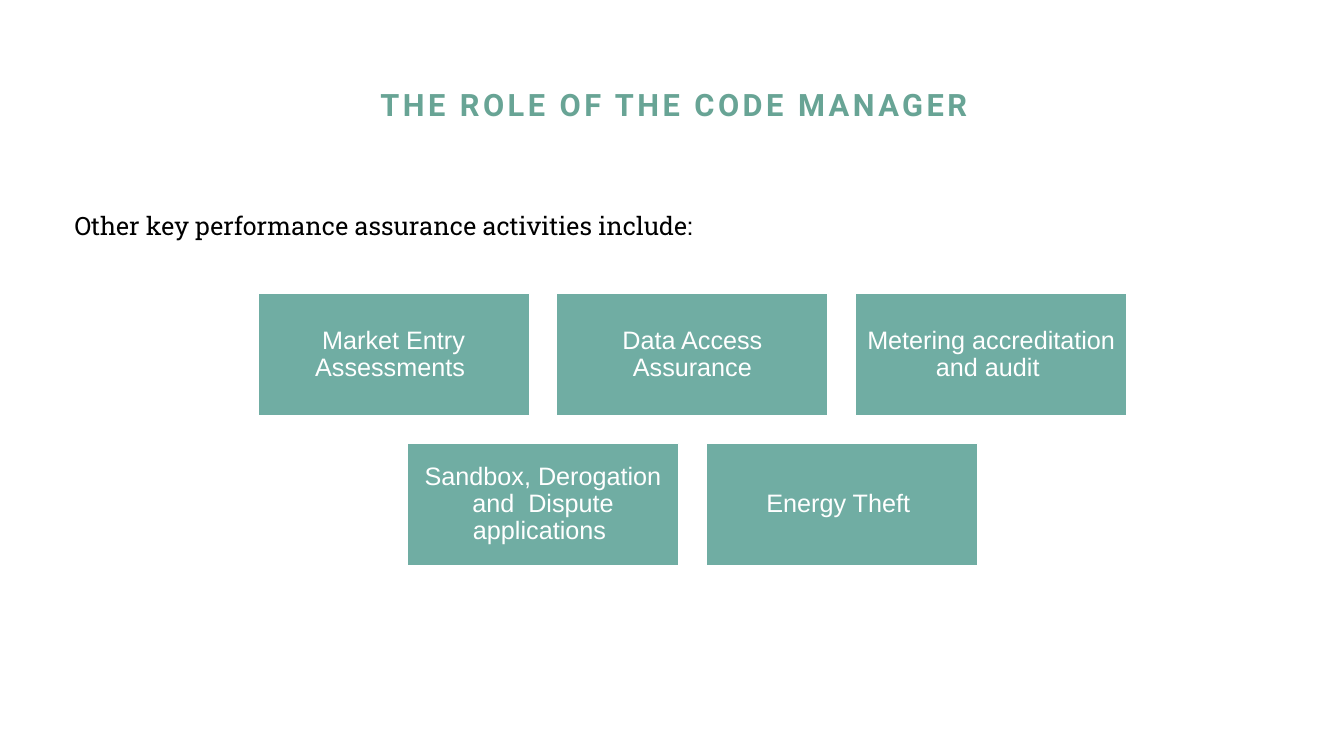
from pptx import Presentation
from pptx.dml.color import RGBColor
from pptx.enum.shapes import MSO_SHAPE
from pptx.enum.text import MSO_ANCHOR, PP_ALIGN
from pptx.util import Cm, Pt

WHITE, BLACK = "FFFFFF", "000000"
TEAL, TITLE_GREEN = "70ADA3", "68A495"

CARD_WIDTH, CARD_HEIGHT, CARD_GAP = 6.84, 3.09, 0.69
CARDS_CENTRE, CARDS_TOP = 17.45, 7.39
ACTIVITY_ROWS = [
    ["Market Entry Assessments ", "Data Access Assurance", "Metering accreditation and audit "],
    ["Sandbox, Derogation and  Dispute applications ", "Energy Theft "],
]


def colour(hex_string):
    return RGBColor.from_string(hex_string)


def write_text(frame, text, hex_string, font, paragraph=None, spacing=None):
    """Fill the frame with one paragraph; spacing is between letters, in 1/100 pt."""
    frame.word_wrap = True
    para = frame.paragraphs[0]
    for name, value in (paragraph or {}).items():
        setattr(para, name, value)
    span = para.add_run()
    span.text = text
    for name, value in font.items():
        setattr(span.font, name, value)
    span.font.color.rgb = colour(hex_string)
    if spacing:
        span.font._element.set("spc", str(spacing))


def add_text(page, place, *content, **options):
    box = page.shapes.add_textbox(*map(Cm, place))
    write_text(box.text_frame, *content, **options)


def add_card(page, left, top, text):
    card = page.shapes.add_shape(
        MSO_SHAPE.RECTANGLE, Cm(left), Cm(top), Cm(CARD_WIDTH), Cm(CARD_HEIGHT))
    card.shadow.inherit = False
    card.fill.solid()
    card.fill.fore_color.rgb = colour(TEAL)
    card.line.color.rgb = colour(WHITE)
    card.line.width = Pt(1)
    frame = card.text_frame
    frame.vertical_anchor = MSO_ANCHOR.MIDDLE
    for side in ("left", "top", "right", "bottom"):
        setattr(frame, f"margin_{side}", Cm(0.18))
    write_text(frame, text, WHITE, {"name": "Arial", "size": Pt(18)},
               {"alignment": PP_ALIGN.CENTER, "line_spacing": 0.9})


def add_activities(page):
    """Lay out the cards row by row, each row centred on the same axis."""
    for row, activities in enumerate(ACTIVITY_ROWS):
        pitch = CARD_WIDTH + CARD_GAP
        start = CARDS_CENTRE - (len(activities) * pitch - CARD_GAP) / 2
        top = CARDS_TOP + row * (CARD_HEIGHT + CARD_GAP)
        for column, activity in enumerate(activities):
            add_card(page, start + column * pitch, top, activity)


def main():
    deck = Presentation()
    deck.slide_width, deck.slide_height = Cm(33.87), Cm(19.05)
    page = deck.slides.add_slide(deck.slide_layouts[6])
    add_text(page, (6.5, 2.13, 20.98, 1.88), "THE ROLE OF THE CODE MANAGER", TITLE_GREEN,
             {"name": "Roboto", "size": Pt(22), "bold": True},
             paragraph={"alignment": PP_ALIGN.CENTER, "line_spacing": 0.9}, spacing=250)
    add_text(page, (1.63, 5.18, 24.77, 0.99),
             "Other key performance assurance activities include:", BLACK,
             {"name": "Roboto Slab", "size": Pt(18)})
    add_activities(page)
    deck.save("out.pptx")


if __name__ == "__main__":
    main()
